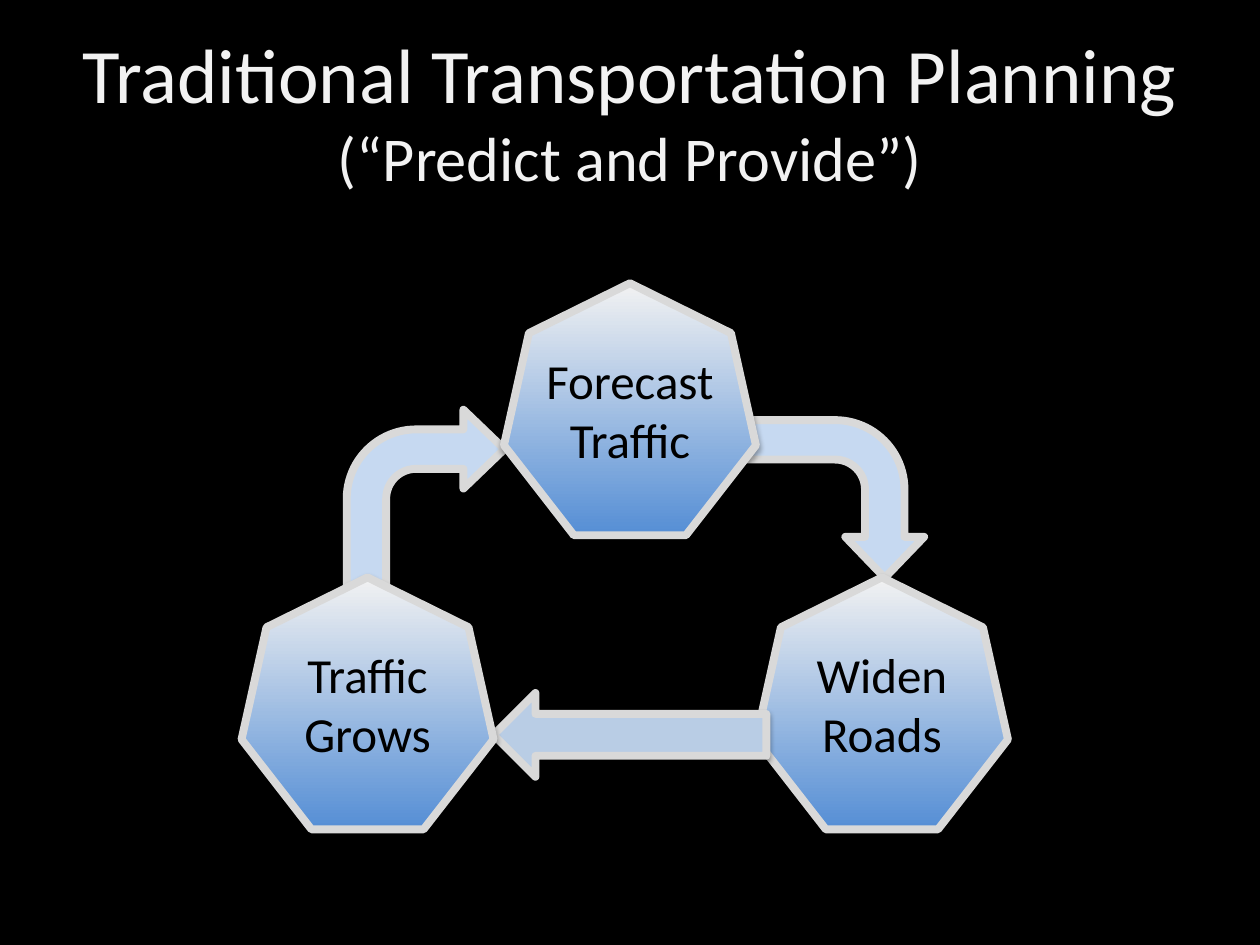
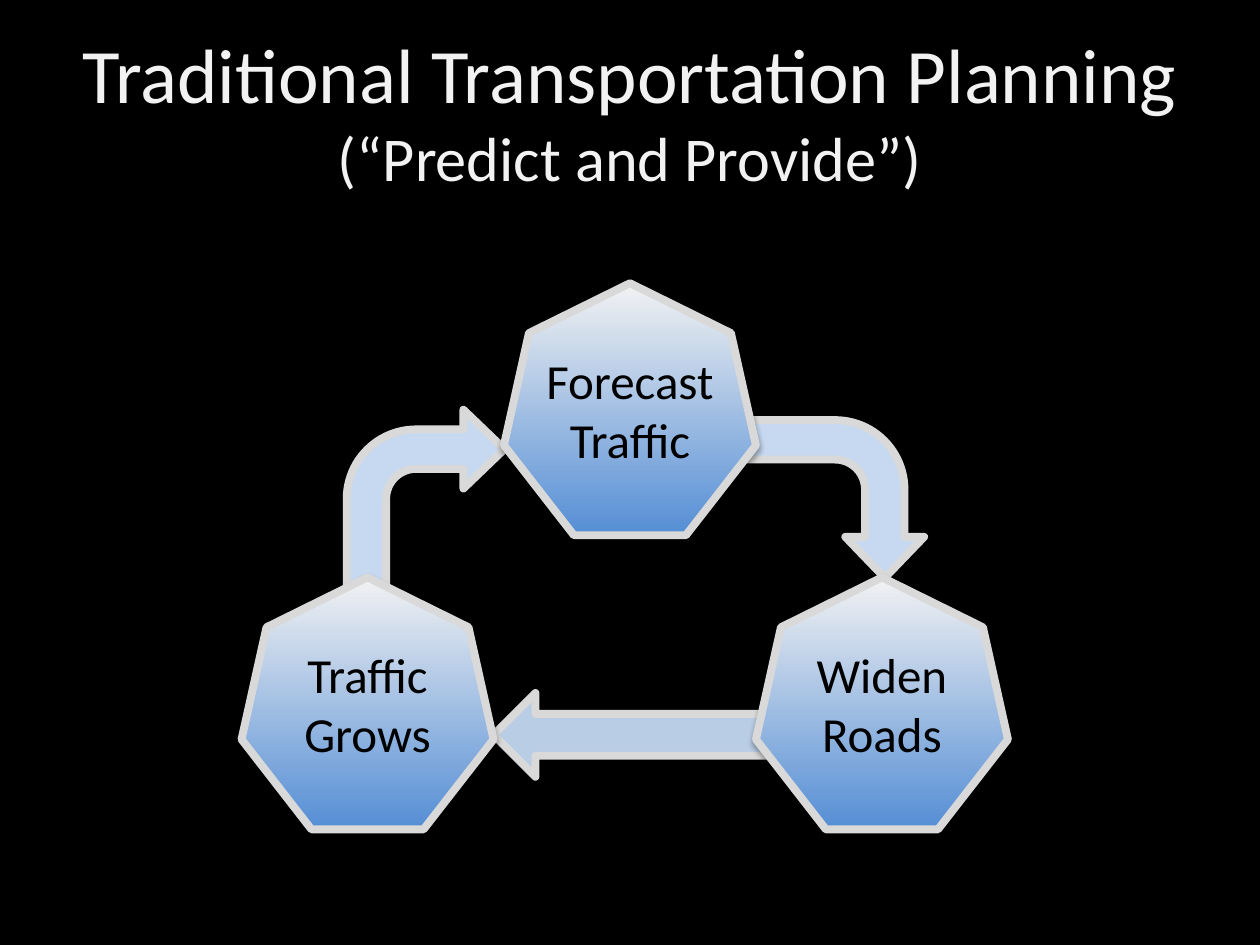
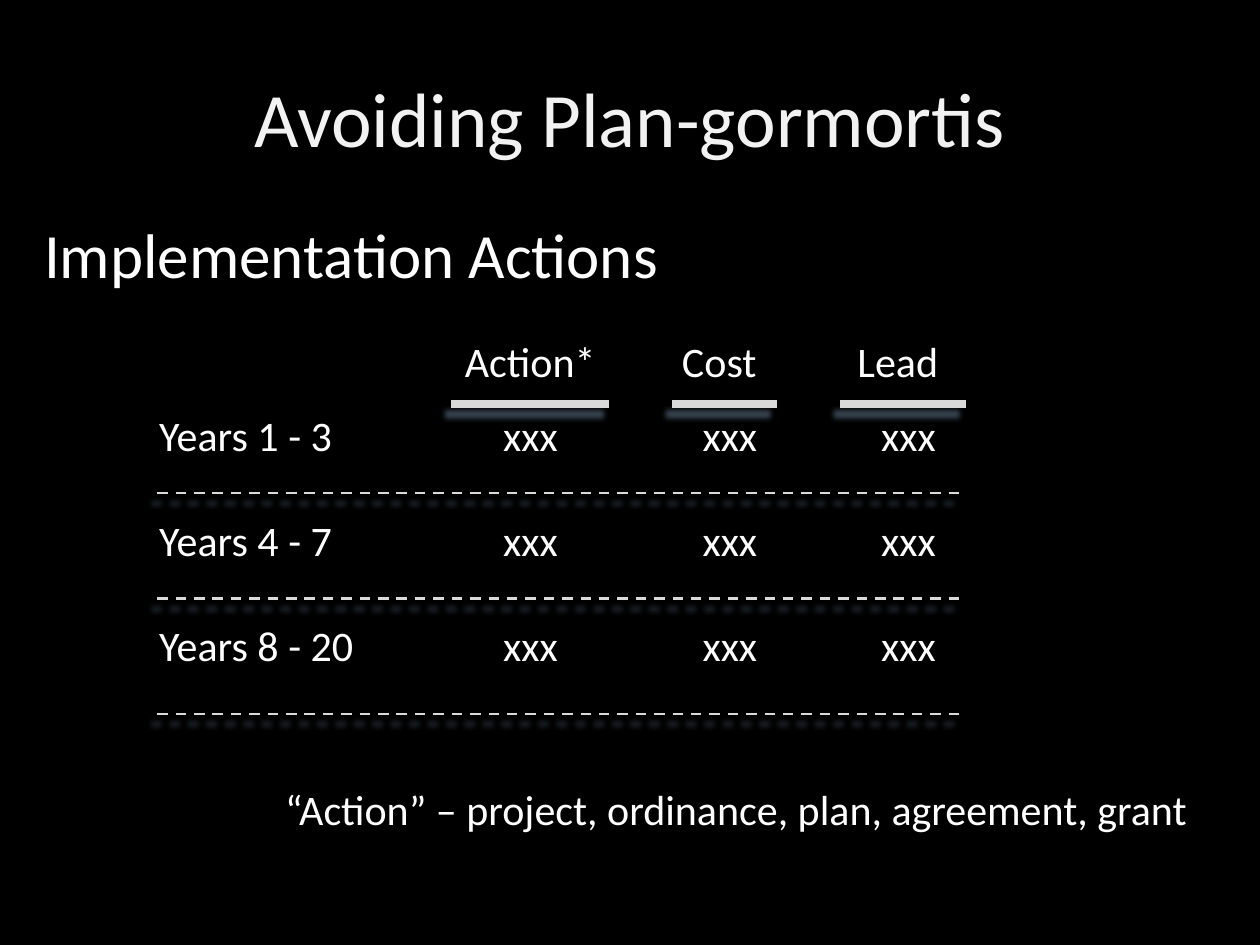
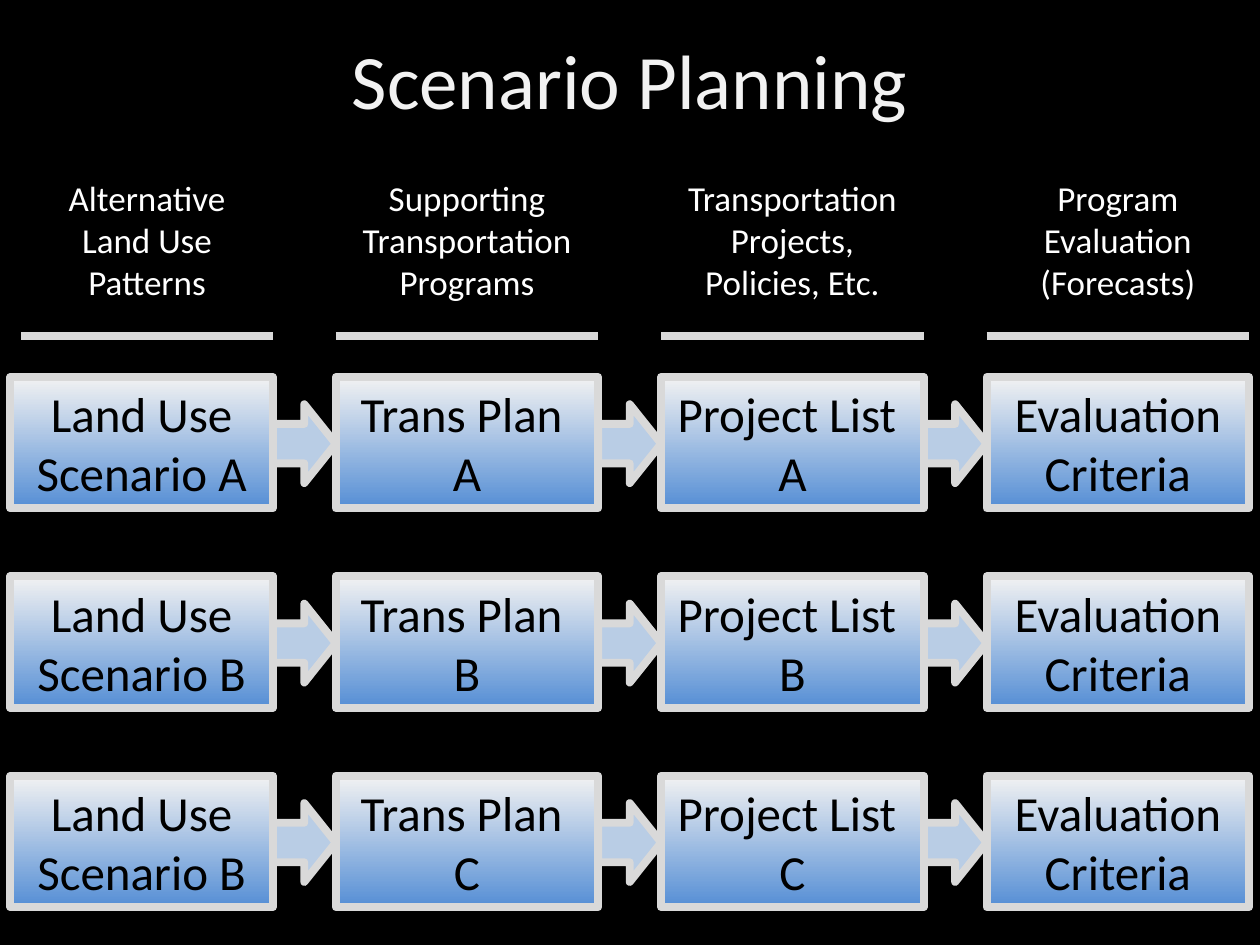
from pptx import Presentation
from pptx import util as u
from pptx.dml import color
from pptx.enum import dml, shapes, text
from pptx.oxml import ns, parse_xml

FONT = "Calibri"
BACKGROUND = "000000"
TITLE_COLOR = "F2F2F2"
BODY_COLOR = "FFFFFF"
BOX_TEXT_COLOR = "000000"
OUTLINE = "D9D9D9"
GRADIENT = ("558ED5", "F2F2F2")
BENT_FILL = "C6D9F1"
ARROW_FILL = "B9CDE5"
SHAPE_SHADOW = ("000000", 35, 1.8, 90)
TABLE_LINE_SHADOW = ("95B3D7", 38, 6.6, 123)
HEADING_LINE_SHADOW = ("000000", 38, 1.6, 90)

SHAPE = shapes.MSO_SHAPE
CENTER = text.PP_ALIGN.CENTER
LEFT = text.PP_ALIGN.LEFT


def rgb(value):
    return color.RGBColor.from_string(value)


def cm(*lengths):
    return [u.Cm(length) for length in lengths]


def new_slide(presentation):
    slide = presentation.slides.add_slide(presentation.slide_layouts[6])
    slide.background.fill.solid()
    slide.background.fill.fore_color.rgb = rgb(BACKGROUND)
    return slide


def write(shape, content, size, font_color, align=CENTER, anchor=text.MSO_ANCHOR.MIDDLE):
    frame = shape.text_frame
    frame.word_wrap = True
    frame.vertical_anchor = anchor
    frame.text = content
    for paragraph in frame.paragraphs:
        paragraph.alignment = align
        paragraph.font.name = FONT
        paragraph.font.size = u.Pt(size)
        paragraph.font.color.rgb = rgb(font_color)
    return frame


def add_title(slide, content, top, height, subtitle=None):
    box = slide.shapes.add_textbox(*cm(1.27, top, 22.86, height))
    paragraph = write(box, content, 44, TITLE_COLOR).paragraphs[0]
    if subtitle:
        paragraph.add_line_break()
        run = paragraph.add_run()
        run.text = subtitle
        run.font.size = u.Pt(35.6)


def add_label(slide, content, left, top, width, height=1.28, size=24, align=CENTER):
    box = slide.shapes.add_textbox(*cm(left, top, width, height))
    frame = write(box, content, size, BODY_COLOR, align, text.MSO_ANCHOR.TOP)
    frame.auto_size = text.MSO_AUTO_SIZE.SHAPE_TO_FIT_TEXT


def add_shadow(shape, shadow):
    shade, opacity, distance, direction = shadow
    shape.element.spPr.append(parse_xml(
        f'<a:effectLst {ns.nsdecls("a")}>'
        f'<a:outerShdw blurRad="{u.Pt(3.1)}" dist="{u.Pt(distance)}" '
        f'dir="{direction * 60000}" rotWithShape="0">'
        f'<a:srgbClr val="{shade}"><a:alpha val="{opacity * 1000}"/></a:srgbClr>'
        f'</a:outerShdw></a:effectLst>'))


def set_outline(shape, width=4.5):
    shape.line.color.rgb = rgb(OUTLINE)
    shape.line.width = u.Pt(width)


def add_arrow(slide, kind, left, top, width, height, fill=ARROW_FILL):
    arrow = slide.shapes.add_shape(kind, *cm(left, top, width, height))
    arrow.fill.solid()
    arrow.fill.fore_color.rgb = rgb(fill)
    set_outline(arrow)
    add_shadow(arrow, SHAPE_SHADOW)
    return arrow


def add_bent_arrow(slide, left, rotation=0):
    arrow = add_arrow(slide, SHAPE.BENT_ARROW, left, 8.26, 3.18, 3.6, BENT_FILL)
    arrow.rotation = rotation
    for index, value in enumerate((0.25, 0.25, 0.26, 0.44)):
        arrow.adjustments[index] = value


def add_box(slide, kind, content, left, top, width, height):
    box = slide.shapes.add_shape(kind, *cm(left, top, width, height))
    box.fill.gradient()
    box.fill.gradient_angle = 90
    for stop, shade in zip(box.fill.gradient_stops, GRADIENT):
        stop.color.rgb = rgb(shade)
    set_outline(box)
    write(box, content, 28, BOX_TEXT_COLOR)
    return box


def add_stage(slide, content, left, top):
    stage = add_box(slide, SHAPE.HEPTAGON, content, left, top, 5.08, 5.08)
    add_shadow(stage, SHAPE_SHADOW)


def add_rule(slide, left, right, y, shadow, width=4.5, dashed=False):
    rule = slide.shapes.add_connector(shapes.MSO_CONNECTOR.STRAIGHT, *cm(left, y, right, y))
    set_outline(rule, width)
    if dashed:
        rule.line.dash_style = dml.MSO_LINE.DASH
    add_shadow(rule, shadow)


def build_cycle(presentation, order):
    slide = new_slide(presentation)
    add_title(slide, "Traditional Transportation Planning", 0, 4.45, "(“Predict and Provide”)")
    parts = {
        "to forecast": lambda: add_bent_arrow(slide, 6.99),
        "to widen": lambda: add_bent_arrow(slide, 15.24, 90),
        "to traffic": lambda: add_arrow(slide, SHAPE.LEFT_ARROW, 9.95, 13.97, 5.5, 1.69),
        "forecast": lambda: add_stage(slide, "Forecast Traffic", 10.16, 5.71),
        "widen": lambda: add_stage(slide, "Widen Roads", 15.24, 11.64),
        "traffic": lambda: add_stage(slide, "Traffic Grows", 4.87, 11.64),
    }
    for name in order:
        parts[name]()


def build_actions(presentation):
    slide = new_slide(presentation)
    add_title(slide, "Avoiding Plan-gormortis", 0.76, 3.18)
    add_label(slide, "Implementation Actions", 0.64, 4.23, 17.57, 1.8, 36, LEFT)

    row_tops = [8.13 + 2.12 * row for row in range(3)]
    for period, top in zip(("Years 1 - 3", "Years 4 - 7", "Years 8 - 20"), row_tops):
        add_label(slide, period, 2.96, top, 4.45, align=LEFT)

    columns = (
        ("Action*", 8.89, 8.47, 9.1, 12.28),
        ("Cost", 12.7, 12.49, 13.55, 15.66),
        ("Lead", 16.3, 16.09, 16.93, 19.47),
    )
    for heading, heading_left, cell_left, rule_left, rule_right in columns:
        add_label(slide, heading, heading_left, 6.63, 3.6)
        add_rule(slide, rule_left, rule_right, 8.15, TABLE_LINE_SHADOW)
        for top in row_tops:
            add_label(slide, "xxx", cell_left, top, 4.45)

    for y in (9.94, 12.07, 14.39):
        add_rule(slide, 3.17, 19.47, y, TABLE_LINE_SHADOW, 1.5, True)
    add_label(slide, "“Action” – project, ordinance, plan, agreement, grant",
              5.5, 15.66, 19.47, align=LEFT)


def build_scenarios(presentation):
    slide = new_slide(presentation)
    add_title(slide, "Scenario Planning", 0, 3.18)
    columns = (
        ("Alternative Land Use Patterns",
         ("Land Use Scenario A", "Land Use Scenario B", "Land Use Scenario B")),
        ("Supporting Transportation Programs",
         [f"Trans Plan \n{letter}" for letter in "ABC"]),
        ("Transportation Projects, Policies, Etc.",
         [f"Project List \n{letter}" for letter in "ABC"]),
        ("Program Evaluation (Forecasts)", ["Evaluation Criteria"] * 3),
    )
    box_width, box_height = 5.29, 2.65
    column_lefts = [0.21 + 6.56 * column for column in range(len(columns))]
    row_tops = [7.6 + 4.02 * row for row in range(3)]

    for left in column_lefts[:-1]:
        for top in row_tops:
            add_arrow(slide, SHAPE.RIGHT_ARROW, left + box_width, top + 0.55, 1.27, 1.59)

    for left, (heading, boxes) in zip(column_lefts, columns):
        right = left + box_width
        heading_left = max(left, 0.43)
        add_label(slide, heading, heading_left, 3.43, right - heading_left, 2.82, 20)
        add_rule(slide, heading_left, right, 6.77, HEADING_LINE_SHADOW)
        for content, top in zip(boxes, row_tops):
            box = add_box(slide, SHAPE.RECTANGLE, content, left, top, box_width, box_height)
            box.shadow.inherit = False


def main():
    presentation = Presentation()
    presentation.slide_width, presentation.slide_height = cm(25.4, 19.05)
    build_cycle(presentation, ("to forecast", "to widen", "widen",
                               "to traffic", "traffic", "forecast"))
    build_cycle(presentation, ("to traffic", "to widen", "to forecast",
                               "forecast", "widen", "traffic"))
    build_actions(presentation)
    build_scenarios(presentation)
    presentation.save("out.pptx")


if __name__ == "__main__":
    main()
